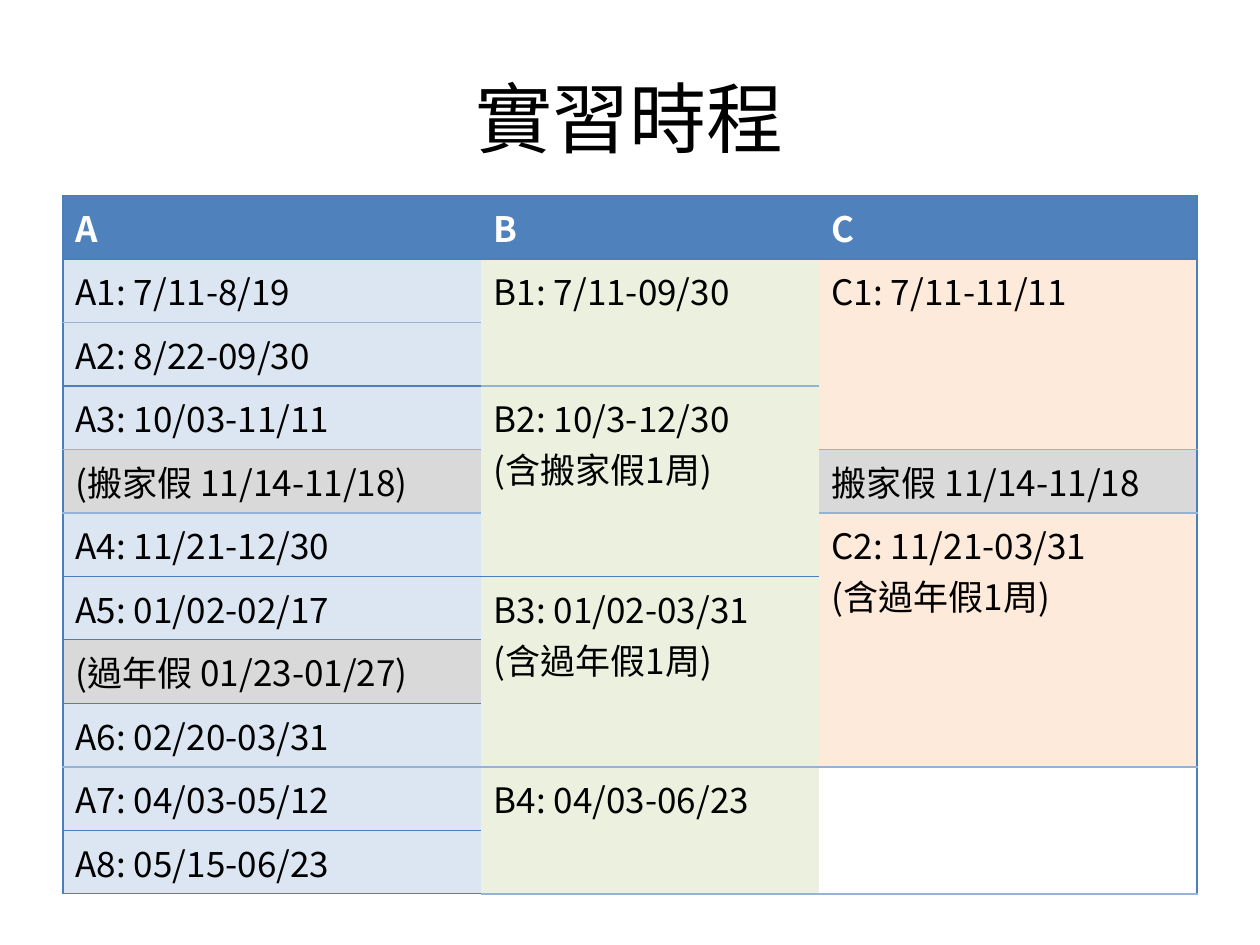
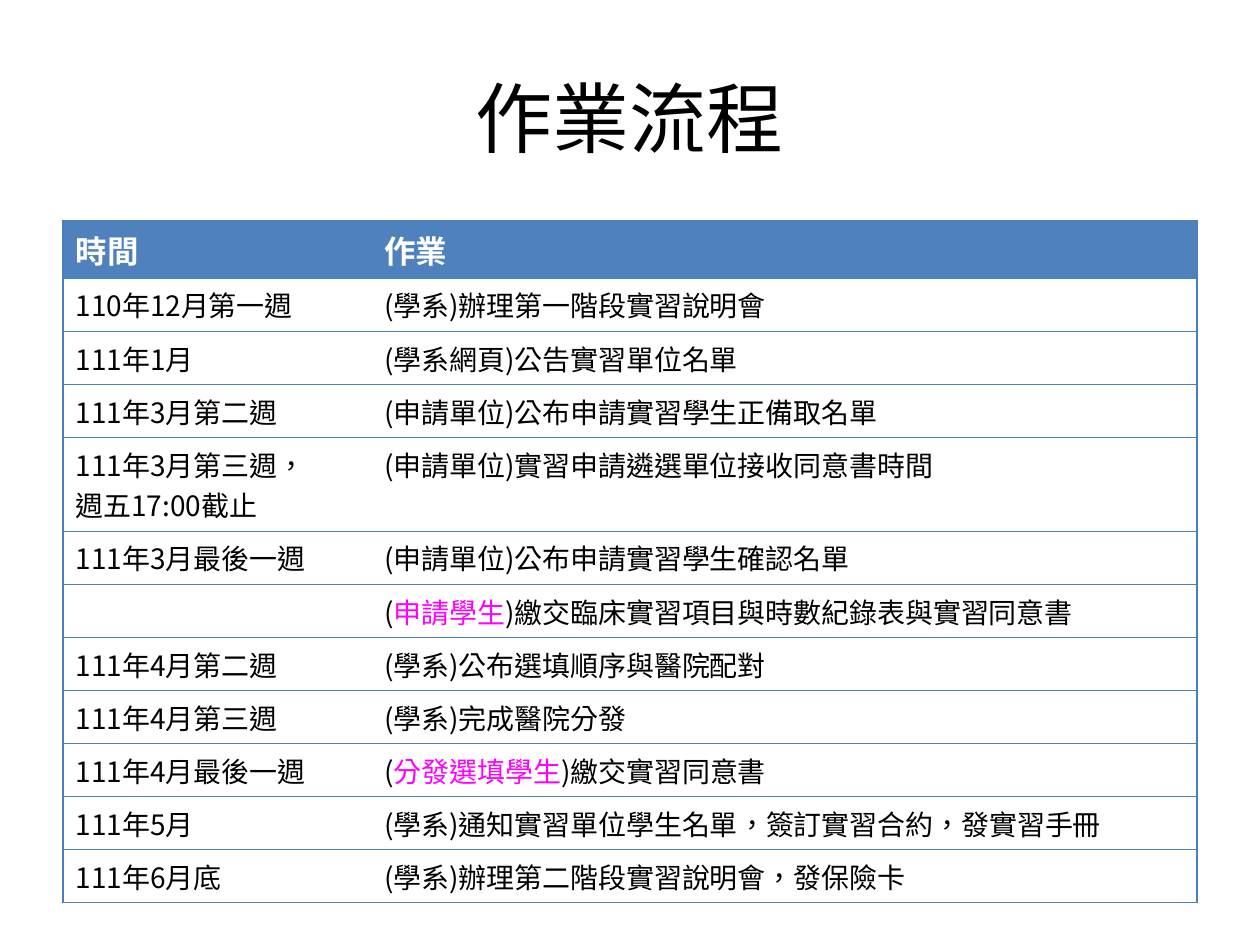
from lxml import etree
from pptx import Presentation
from pptx.dml.color import RGBColor
from pptx.enum import text
from pptx.oxml import ns
from pptx.util import Cm, Pt

COLORS = {
    "header": "4F81BD", "white": "FFFFFF", "black": "000000", "pink": "FF00FF",
    "blue": "DCE6F2", "green": "EBF1DE", "orange": "FDEADA", "grey": "D9D9D9",
    "dark": "4B7EBC", "light": "95B3D7",
}
LINE_WIDTHS = {"dark": Pt(0.75), "light": Pt(1)}
FONT = "Noto Sans CJK SC"
COMMA_FONT = "Noto Sans CJK TC"
PLAIN_TABLE_STYLE = "{2D5ABB26-0587-4C30-8999-92F81FD0307C}"
MARGIN, CONTENT_WIDTH = 1.27, 22.86

# Each column lists its blocks from top to bottom: text, rows, fill, line below.
SCHEDULE = {
    "A": [
        ("A1: 7/11-8/19", 1, "blue", "light"),
        ("A2: 8/22-09/30", 1, "blue", "dark"),
        ("A3: 10/03-11/11", 1, "blue", "light"),
        ("(搬家假 11/14-11/18)", 1, "grey", "light"),
        ("A4: 11/21-12/30", 1, "blue", "dark"),
        ("A5: 01/02-02/17", 1, "blue", "dark"),
        ("(過年假 01/23-01/27)", 1, "grey", "dark"),
        ("A6: 02/20-03/31", 1, "blue", "light"),
        ("A7: 04/03-05/12", 1, "blue", "dark"),
        ("A8: 05/15-06/23", 1, "blue", "dark"),
    ],
    "B": [
        ("B1: 7/11-09/30", 2, "green", "light"),
        ("B2: 10/3-12/30\n(含搬家假1周)", 3, "green", "dark"),
        ("B3: 01/02-03/31\n(含過年假1周)", 3, "green", "light"),
        ("B4: 04/03-06/23", 2, "green", "light"),
    ],
    "C": [
        ("C1: 7/11-11/11", 3, "orange", "light"),
        ("搬家假 11/14-11/18", 1, "grey", "light"),
        ("C2: 11/21-03/31\n(含過年假1周)", 4, "orange", "light"),
        ("", 2, "white", "light"),
    ],
}

# Bars set off the words with a format of their own.
STEPS = [
    ("110年12月第一週", "(學系)辦理第一階段實習說明會"),
    ("111年1月", "(學系網頁)公告實習單位名單"),
    ("111年3月第二週", "(申請單位)公布申請實習學生正備取名單"),
    ("111年3月第三週，\n週五17:00截止", "(申請單位)實習申請遴選單位接收同意書時間"),
    ("111年3月最後一週", "(申請單位)公布申請實習學生確認名單"),
    ("", "(|申請學生|)繳交臨床實習項目與時數紀錄表與實習同意書"),
    ("111年4月第二週", "(學系)公布選填順序與醫院配對"),
    ("111年4月第三週", "(學系)完成醫院分發"),
    ("111年4月最後一週", "(|分發選填學生|)繳交實習同意書"),
    ("111年5月", "(學系)通知實習單位學生名單|，|簽訂實習合約，發實習手冊"),
    ("111年6月底", "(學系)辦理第二階段實習說明會，發保險卡"),
]


def rgb(color):
    return RGBColor.from_string(COLORS[color])


def format_run(run, size, color, bold=False, font=FONT):
    run.font.size = Pt(size)
    run.font.bold = bold
    run.font.color.rgb = rgb(color)
    run.font.name = font
    properties = run.font._element
    properties.set("lang", "zh-TW")
    etree.SubElement(properties, ns.qn("a:ea"), typeface=font)


def write(text_frame, content, size, color, bold=False):
    """Write one paragraph per line; every second piece between bars stands out."""
    for index, line in enumerate(content.split("\n")):
        paragraph = text_frame.add_paragraph() if index else text_frame.paragraphs[0]
        paragraph.font.size = Pt(size)
        for position, piece in enumerate(line.split("|")):
            if not piece:
                continue
            run = paragraph.add_run()
            run.text = piece
            if position % 2 and piece == "，":
                format_run(run, size, color, bold, COMMA_FONT)
            else:
                format_run(run, size, "pink" if position % 2 else color, bold)


def set_borders(cell, **lines):
    """Set the cell's lines; each side takes a colour name or None."""
    properties = cell._tc.get_or_add_tcPr()
    sides = ("left", "lnL"), ("right", "lnR"), ("top", "lnT"), ("bottom", "lnB")
    position = 0
    for side, tag in sides:
        color = lines.get(side)
        if color:
            line = etree.Element(ns.qn(f"a:{tag}"), w=str(LINE_WIDTHS[color]))
            fill = etree.SubElement(line, ns.qn("a:solidFill"))
            etree.SubElement(fill, ns.qn("a:srgbClr"), val=COLORS[color])
            properties.insert(position, line)
            position += 1


def fill_cell(cell, color):
    cell.fill.solid()
    cell.fill.fore_color.rgb = rgb(color)


def outer_sides(column, last_column):
    return {"left": None if column else "dark",
            "right": "dark" if column == last_column else None}


def add_title(slide, title):
    box = slide.shapes.add_textbox(Cm(MARGIN), Cm(0.76), Cm(CONTENT_WIDTH), Cm(3.18))
    text_frame = box.text_frame
    text_frame.word_wrap = True
    text_frame.vertical_anchor = text.MSO_ANCHOR.MIDDLE
    write(text_frame, title, 44, "black")
    text_frame.paragraphs[0].alignment = text.PP_ALIGN.CENTER


def add_plain_table(slide, top, widths, heights, headings, heading_size):
    """Add a table without inner lines, with a blue heading row."""
    frame = slide.shapes.add_table(len(heights), len(widths), Cm(MARGIN), Cm(top),
                                   Cm(sum(widths)), Cm(sum(heights)))
    table = frame.table
    table.horz_banding = False
    table._tbl.tblPr.find(ns.qn("a:tableStyleId")).text = PLAIN_TABLE_STYLE
    for column, width in zip(table.columns, widths):
        column.width = Cm(width)
    for row, height in zip(table.rows, heights):
        row.height = Cm(height)
    for column, heading in enumerate(headings):
        cell = table.cell(0, column)
        fill_cell(cell, "header")
        cell.vertical_anchor = text.MSO_ANCHOR.MIDDLE
        write(cell.text_frame, heading, heading_size, "white", bold=True)
        set_borders(cell, top="dark", bottom="dark",
                    **outer_sides(column, len(widths) - 1))
    return table


def build_schedule(slide):
    add_title(slide, "實習時程")
    table = add_plain_table(slide, 3.94, [8.43, 6.81, 7.62], [1.28] * 11, SCHEDULE, 20)
    for column, blocks in enumerate(SCHEDULE.values()):
        sides = outer_sides(column, len(SCHEDULE) - 1)
        row, line_above = 1, "dark"
        for content, span, color, line_below in blocks:
            last_row = row + span - 1
            cell = table.cell(row, column)
            for part in range(row, last_row + 1):
                fill_cell(table.cell(part, column), color)
                set_borders(table.cell(part, column), **sides,
                            top=line_above if part == row else None,
                            bottom=line_below if part in (row, last_row) else None)
            if span > 1:
                cell.merge(table.cell(last_row, column))
            write(cell.text_frame, content, 20, "black")
            row, line_above = last_row + 1, line_below


def build_process(slide):
    add_title(slide, "作業流程")
    heights = [1.17] + [1.89 if "\n" in time else 1.07 for time, _ in STEPS]
    table = add_plain_table(slide, 4.44, [6.22, 16.64], heights, ["時間", "作業"], 18)
    for row, step in enumerate(STEPS, start=1):
        continued = row < len(STEPS) and not STEPS[row][0]
        for column, content in enumerate(step):
            cell = table.cell(row, column)
            write(cell.text_frame, content, 16, "black")
            set_borders(cell, top="dark" if step[0] else None,
                        bottom=None if continued else "dark", **outer_sides(column, 1))


def main():
    presentation = Presentation()
    presentation.slide_width, presentation.slide_height = Cm(25.4), Cm(19.05)
    for build in (build_schedule, build_process):
        build(presentation.slides.add_slide(presentation.slide_layouts[6]))
    presentation.save("out.pptx")


if __name__ == "__main__":
    main()
